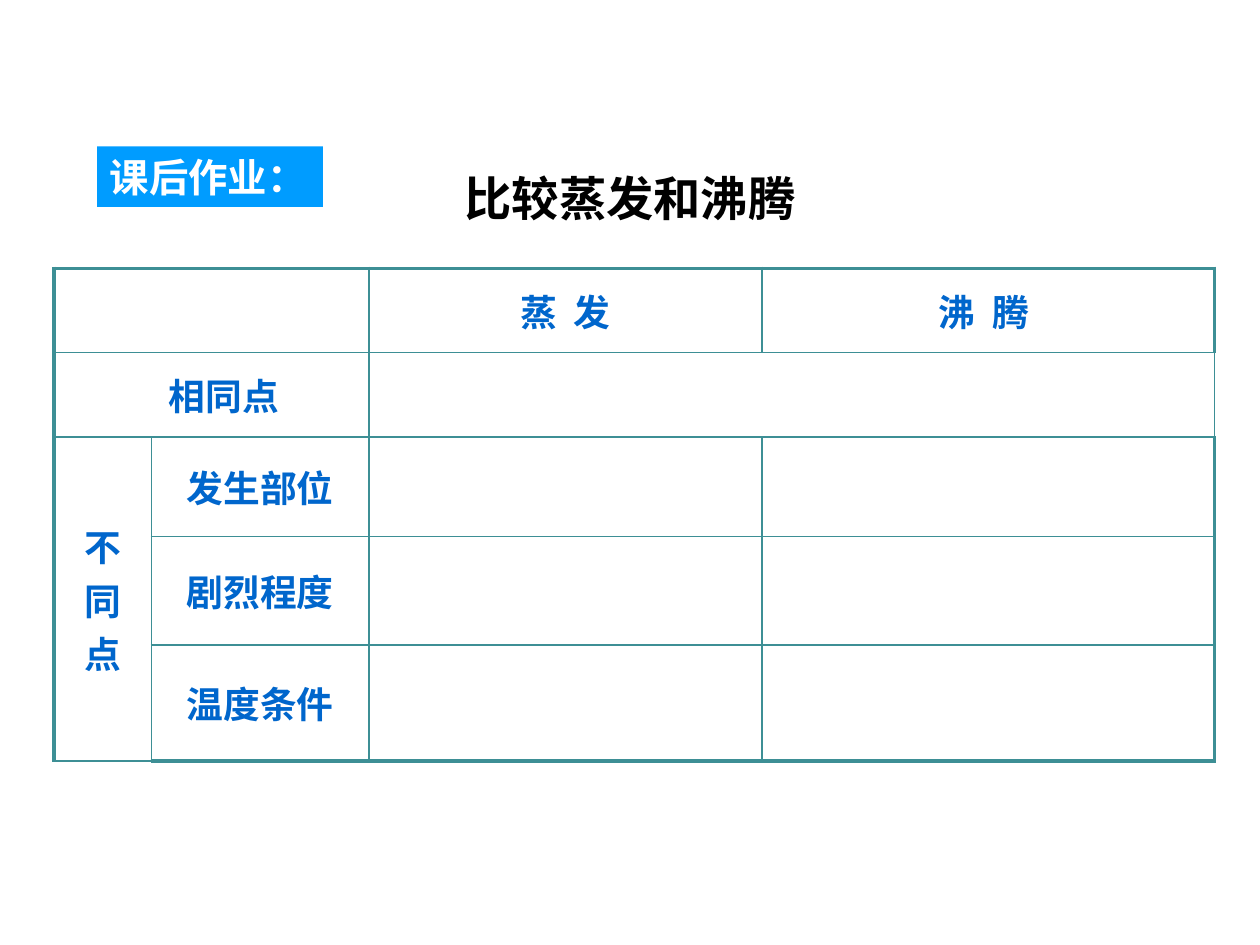
from lxml import etree
from pptx import Presentation
from pptx.dml.color import RGBColor
from pptx.enum.shapes import MSO_SHAPE
from pptx.enum.text import MSO_ANCHOR, MSO_AUTO_SIZE, PP_ALIGN
from pptx.oxml.ns import qn
from pptx.util import Cm, Pt

RECTANGLE = MSO_SHAPE.RECTANGLE
MIDDLE = MSO_ANCHOR.MIDDLE
FIT_SHAPE = MSO_AUTO_SIZE.SHAPE_TO_FIT_TEXT
LEFT, CENTER = PP_ALIGN.LEFT, PP_ALIGN.CENTER

BLACK = RGBColor(0x00, 0x00, 0x00)
WHITE = RGBColor(0xFF, 0xFF, 0xFF)
LABEL_BLUE = RGBColor(0x00, 0x9C, 0xFF)
TEXT_BLUE = RGBColor(0x00, 0x66, 0xCC)
TEAL = RGBColor(0x3D, 0x8F, 0x95)

TITLE_FONT = "Arial"
TABLE_FONT = "Noto Sans CJK SC"
INNER_LINE, OUTER_LINE = Pt(1), Pt(2.25)

COLUMN_WIDTHS = (1.96, 4.39, 7.92, 9.12)
ROW_HEIGHTS = (1.7, 1.7, 2.01, 2.18, 2.34)
MERGES = (((0, 0), (0, 1)), ((1, 0), (1, 1)), ((1, 2), (1, 3)), ((2, 0), (4, 0)))
CELL_TEXTS = {
    (0, 2): "蒸  发",
    (0, 3): "沸  腾 ",
    (1, 0): "相同点",
    (2, 0): "不 同 点",
    (2, 1): "发生部位",
    (3, 1): "剧烈程度",
    (4, 1): "温度条件",
}


def write(tf, text, font, size, color, align):
    """Fill the first paragraph with bold text."""
    p = tf.paragraphs[0]
    p.text = text
    p.alignment = align
    p.font.name = font
    p.font.size = Pt(size)
    p.font.bold = True
    p.font.color.rgb = color
    return p


def add_title(slide, left, top, width, height):
    sp = slide.shapes.title
    sp.left, sp.top, sp.width, sp.height = left, top, width, height
    sp.text_frame.vertical_anchor = MIDDLE
    write(sp.text_frame, "比较蒸发和沸腾", TITLE_FONT, 27, BLACK, CENTER)


def add_homework_label(slide, left, top, width, height):
    sp = slide.shapes.add_shape(RECTANGLE, left, top, width, height)
    sp.shadow.inherit = False
    sp.fill.solid()
    sp.fill.fore_color.rgb = LABEL_BLUE
    sp.line.fill.background()
    tf = sp.text_frame
    tf.word_wrap = False
    tf.auto_size = FIT_SHAPE
    tf.vertical_anchor = MIDDLE
    write(tf, "课后作业：", TITLE_FONT, 22.5, WHITE, LEFT)


def set_borders(cell, row, col):
    """Draw the cell's edges, thicker along the outside of the table."""
    outside = {
        "a:lnL": col == 0,
        "a:lnR": col == len(COLUMN_WIDTHS) - 1,
        "a:lnT": row == 0,
        "a:lnB": row == len(ROW_HEIGHTS) - 1,
    }
    tcPr = cell._tc.get_or_add_tcPr()
    for tag, is_outside in outside.items():
        width = OUTER_LINE if is_outside else INNER_LINE
        line = etree.SubElement(tcPr, qn(tag), w=str(int(width)))
        fill = etree.SubElement(line, qn("a:solidFill"))
        etree.SubElement(fill, qn("a:srgbClr"), val=str(TEAL))


def add_comparison_table(slide, left, top):
    table = slide.shapes.add_table(
        len(ROW_HEIGHTS), len(COLUMN_WIDTHS), left, top,
        Cm(sum(COLUMN_WIDTHS)), Cm(sum(ROW_HEIGHTS))).table
    table.first_row = table.horz_banding = False
    for column, width in zip(table.columns, COLUMN_WIDTHS):
        column.width = Cm(width)
    for table_row, height in zip(table.rows, ROW_HEIGHTS):
        table_row.height = Cm(height)
    for first, last in MERGES:
        table.cell(*first).merge(table.cell(*last))

    for row in range(len(ROW_HEIGHTS)):
        for col in range(len(COLUMN_WIDTHS)):
            cell = table.cell(row, col)
            set_borders(cell, row, col)
            cell.fill.background()
            cell.vertical_anchor = MIDDLE
            cell.margin_left = cell.margin_right = Cm(0.18)
            cell.margin_top = cell.margin_bottom = Cm(0.1)
            if (row, col) in CELL_TEXTS:
                p = write(cell.text_frame, CELL_TEXTS[row, col],
                          TABLE_FONT, 21, TEXT_BLUE, CENTER)
                p.space_before = Pt(4)
    table.cell(1, 0).margin_left = Cm(0.68)
    table.cell(2, 0)._tc.get_or_add_tcPr().set("vert", "eaVert")


def main():
    prs = Presentation()
    prs.slide_width, prs.slide_height = Cm(25.4), Cm(19.05)
    slide = prs.slides.add_slide(prs.slide_layouts.get_by_name("Title Only"))
    add_title(slide, Cm(1.9), Cm(3.3), Cm(21.6), Cm(1.37))
    add_comparison_table(slide, Cm(1.09), Cm(5.41))
    add_homework_label(slide, Cm(1.96), Cm(2.95), Cm(4.55), Cm(1.22))
    prs.save("out.pptx")


if __name__ == "__main__":
    main()
